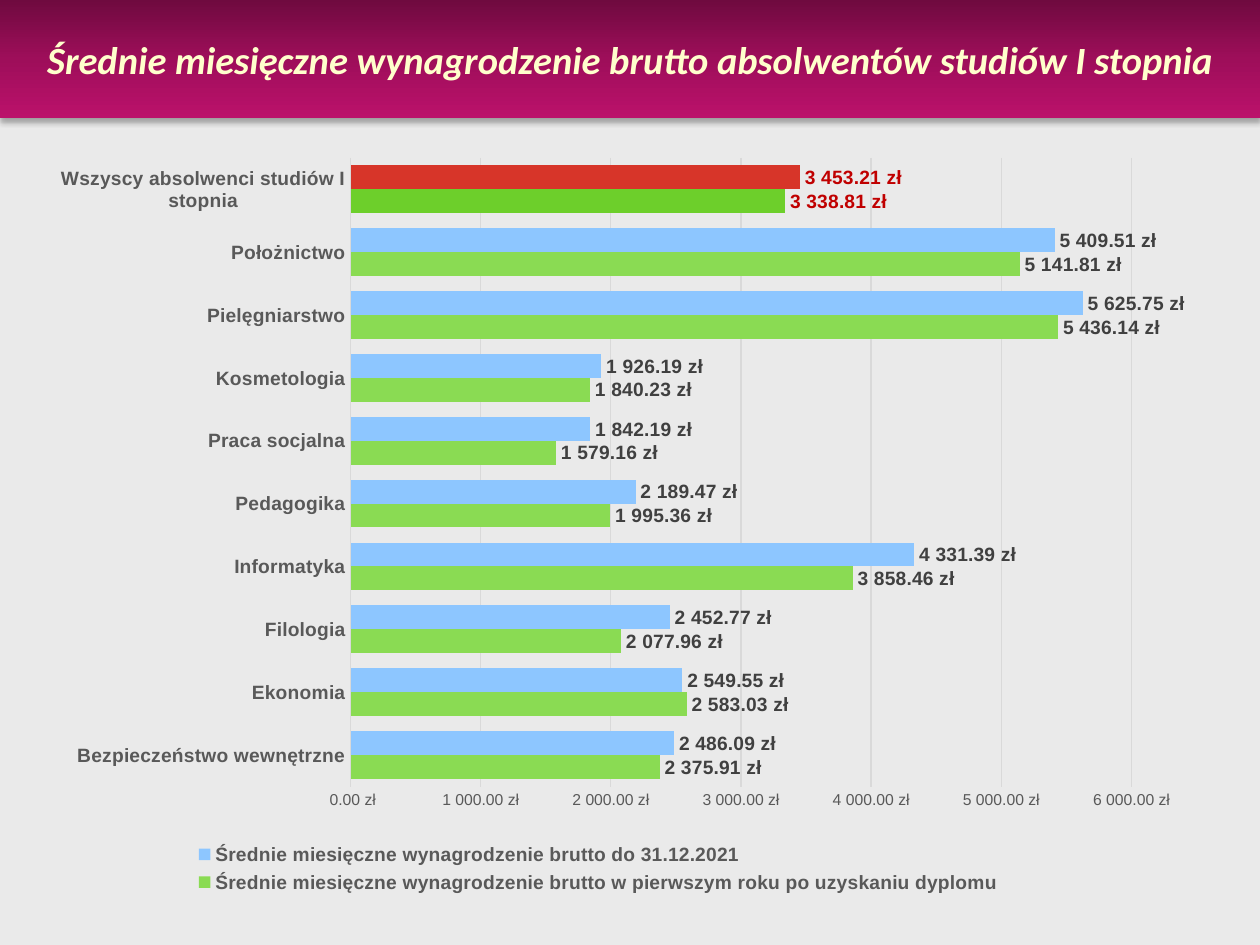
from copy import deepcopy

from lxml import etree
from pptx import Presentation
from pptx import util as u
from pptx.chart.data import CategoryChartData
from pptx.dml.color import RGBColor
from pptx.enum import chart as ch, shapes, text
from pptx.oxml import ns

PX = 914400 // 126
MONEY = '#\\ ##0.00\\ "zł"'
GREY, GRID = "595959", "D9D9D9"

# field of study, first year after diploma, until 31.12.2021
SALARIES = [
    ("Bezpieczeństwo wewnętrzne", 2375.91, 2486.09),
    ("Ekonomia", 2583.03, 2549.55),
    ("Filologia", 2077.96, 2452.77),
    ("Informatyka", 3858.46, 4331.39),
    ("Pedagogika", 1995.36, 2189.47),
    ("Praca socjalna", 1579.16, 1842.19),
    ("Kosmetologia", 1840.23, 1926.19),
    ("Pielęgniarstwo", 5436.14, 5625.75),
    ("Położnictwo", 5141.81, 5409.51),
    ("Wszyscy absolwenci studiów I stopnia", 3338.81, 3453.21),
]
# series name, bar colour, colour of the bar for all graduates
SERIES = [
    ("Średnie miesięczne wynagrodzenie brutto w pierwszym roku po uzyskaniu dyplomu",
     "8ADB53", "6DCF2B"),
    ("Średnie miesięczne wynagrodzenie brutto do 31.12.2021", "8DC6FF", "D73529"),
]


def rgb(value):
    return RGBColor.from_string(value)


def paint(fill, color):
    fill.solid()
    fill.fore_color.rgb = rgb(color)


def sub(parent, tag, **attrs):
    return etree.SubElement(parent, ns.qn(tag), {k: str(v) for k, v in attrs.items()})


def set_layout(parent, inner=False, **fractions):
    """Place a plot area or legend by fractions of the chart frame."""
    for old in parent.findall(ns.qn("c:layout")):
        parent.remove(old)
    layout = etree.Element(ns.qn("c:layout"))
    manual = sub(layout, "c:manualLayout")
    if inner:
        sub(manual, "c:layoutTarget", val="inner")
    for tag in ("xMode", "yMode"):
        sub(manual, "c:" + tag, val="edge")
    for tag, value in fractions.items():
        sub(manual, "c:" + tag, val=value)
    position = parent.find(ns.qn("c:legendPos"))
    parent.insert(0 if position is None else 1, layout)


class Deck:
    def __init__(self, width, height, background):
        self.prs = Presentation()
        self.prs.slide_width, self.prs.slide_height = width * PX, height * PX
        self.s = self.prs.slides.add_slide(self.prs.slide_layouts[6])
        paint(self.s.background.fill, background)

    def font(self, font, size, color, bold=False, italic=False, name="Arial"):
        font.name, font.size = name, u.Pt(size)
        font.bold, font.italic = bold, italic
        font.color.rgb = rgb(color)

    def banner(self, x, y, w, h, title, colors):
        sp = self.s.shapes.add_shape(shapes.MSO_SHAPE.RECTANGLE,
                                     x * PX, y * PX, w * PX, h * PX)
        sp.line.fill.background()
        sp.fill.gradient()
        sp.fill.gradient_angle = 270
        first = sp._element.spPr.find(".//" + ns.qn("a:gs"))
        first.addnext(deepcopy(first))
        for i, (stop, color) in enumerate(zip(sp.fill.gradient_stops, colors)):
            stop.position = i / (len(colors) - 1)
            stop.color.rgb = rgb(color)
        sp.shadow.inherit = False
        shadow = sub(sp._element.spPr.find(ns.qn("a:effectLst")), "a:outerShdw",
                     blurRad=u.Pt(3.5), dist=u.Pt(2.2), dir=5400000, rotWithShape=0)
        sub(sub(shadow, "a:srgbClr", val="000000"), "a:alpha", val=32000)
        tf = sp.text_frame
        tf.word_wrap = True
        tf.vertical_anchor = text.MSO_ANCHOR.MIDDLE
        tf.text = title
        p = tf.paragraphs[0]
        p.alignment = text.PP_ALIGN.CENTER
        self.font(p.runs[0].font, 22, "FFFFCC", True, True, "Calibri")

    def bar_chart(self, x, y, w, h, rows, series):
        data = CategoryChartData(number_format=MONEY)
        names, *columns = zip(*rows)
        data.categories = names
        for (name, *_), values in zip(series, columns):
            data.add_series(name, values)
        chart = self.s.shapes.add_chart(ch.XL_CHART_TYPE.BAR_CLUSTERED, x * PX, y * PX,
                                        w * PX, h * PX, data).chart
        chart.has_title = False
        self.font(chart.font, 10, "000000")
        plot = chart.plots[0]
        plot.gap_width, plot.overlap = 64, 0
        plot.vary_by_categories = False
        set_layout(chart._chartSpace.chart.plotArea, True, x=0.287, y=0.03, w=0.67, h=0.823)
        self.axes(chart)
        for ser, (_, color, accent) in zip(plot.series, series):
            self.bars(ser, color, accent, len(rows) - 1)
        chart.has_legend = True
        legend = chart.legend
        legend.position = ch.XL_LEGEND_POSITION.BOTTOM
        legend.include_in_layout = False
        self.font(legend.font, 11, GREY, True)
        set_layout(legend._element, x=0.15, y=0.92, w=0.7, h=0.08)

    def axes(self, chart):
        cat, val = chart.category_axis, chart.value_axis
        for axis in (cat, val):
            axis.major_tick_mark = axis.minor_tick_mark = ch.XL_TICK_MARK.NONE
        self.font(cat.tick_labels.font, 11, GREY, True)
        self.font(val.tick_labels.font, 9, GREY)
        val.minimum_scale, val.maximum_scale, val.major_unit = 0, 6000, 1000
        val.tick_labels.number_format = MONEY
        val.tick_labels.number_format_is_linked = False
        val.format.line.fill.background()
        for line in (cat.format.line, val.major_gridlines.format.line):
            line.color.rgb = rgb(GRID)
            line.width = u.Pt(0.75)

    def bars(self, ser, color, accent, special):
        """Colour and label one series, with one bar set apart."""
        paint(ser.format.fill, color)
        paint(ser.points[special].format.fill, accent)
        labels = ser.data_labels
        labels.show_value = True
        labels.number_format, labels.number_format_is_linked = MONEY, False
        labels.position = ch.XL_LABEL_POSITION.OUTSIDE_END
        self.font(labels.font, 11, "404040", True)
        label = ser.points[special].data_label
        self.font(label.font, 11, "C00000", True)
        label.position = ch.XL_LABEL_POSITION.OUTSIDE_END
        group = labels._element
        number_format = deepcopy(group.find(ns.qn("c:numFmt")))
        group.find(ns.qn("c:dLbl")).insert(1, number_format)


def main():
    deck = Deck(1260, 945, "EAEAEA")
    deck.bar_chart(16, 135, 1169, 764, SALARIES, SERIES)
    deck.banner(0, 0, 1260, 118,
                "Średnie miesięczne wynagrodzenie brutto absolwentów studiów I stopnia",
                ["6F0A3F", "9E0E5A", "BB116B"])
    deck.prs.save("out.pptx")


if __name__ == "__main__":
    main()
